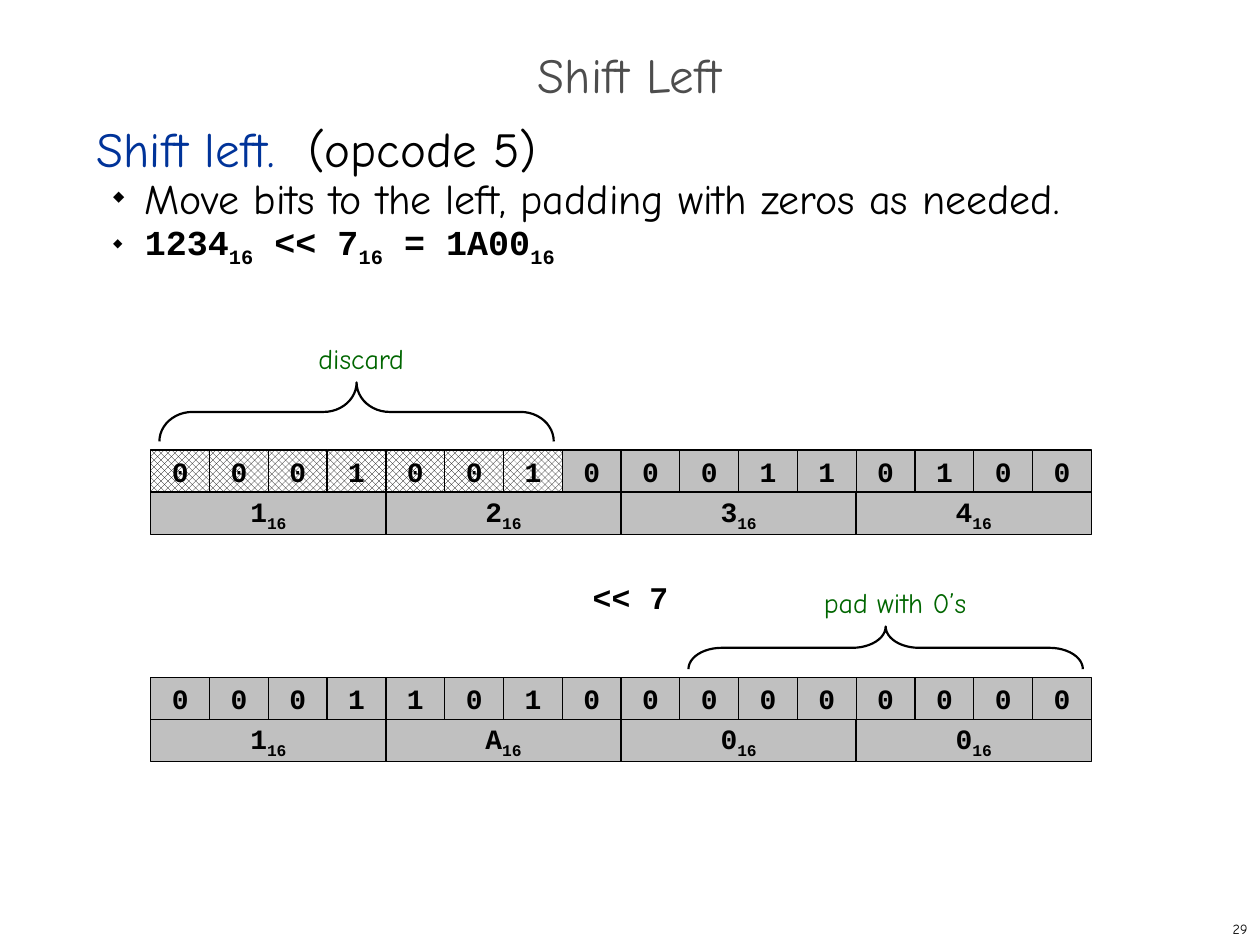
from dataclasses import dataclass

from lxml import etree
from pptx import Presentation
from pptx.dml.color import RGBColor
from pptx.enum.dml import MSO_PATTERN
from pptx.enum.shapes import MSO_SHAPE
from pptx.enum.text import MSO_ANCHOR, PP_ALIGN
from pptx.oxml.ns import qn
from pptx.util import Cm, Pt

LEFT, CENTER, RIGHT = PP_ALIGN.LEFT, PP_ALIGN.CENTER, PP_ALIGN.RIGHT
TOP, MIDDLE = MSO_ANCHOR.TOP, MSO_ANCHOR.MIDDLE
RECTANGLE, LEFT_BRACE = MSO_SHAPE.RECTANGLE, MSO_SHAPE.LEFT_BRACE
LATTICE = MSO_PATTERN.OUTLINED_DIAMOND

BLACK = RGBColor(0x00, 0x00, 0x00)
HATCH = RGBColor(0x01, 0x00, 0x00)
WHITE = RGBColor(0xFF, 0xFF, 0xFF)
SILVER = RGBColor(0xC0, 0xC0, 0xC0)
GRAY = RGBColor(0x4D, 0x4D, 0x4D)
BLUE = RGBColor(0x00, 0x33, 0x99)
GREEN = RGBColor(0x00, 0x66, 0x00)

PROSE, CODE = "Comic Neue", "Courier New"

WORD_LEFT = 3.04
HEX_WIDTH = 4.74
BIT_WIDTH = HEX_WIDTH / 4
ROW_HEIGHT = 0.85
SHIFT = 7
BRACE_SPAN = 7.95
BRACE_GAP = 0.17


@dataclass(frozen=True)
class Run:
    text: str
    color: RGBColor = BLACK
    subscript: bool = False


BASE_16 = Run("16", subscript=True)


@dataclass(frozen=True)
class Word:
    top: float
    bits: str
    digits: str
    discarded: int


@dataclass(frozen=True)
class Brace:
    word: Word
    first_bit: int
    depth: float
    curl: float


@dataclass(frozen=True)
class Label:
    text: str
    left: float
    top: float
    width: float
    height: float
    size: float
    color: RGBColor = BLACK
    font: str = PROSE
    bold: bool = False
    align: PP_ALIGN = LEFT
    anchor: MSO_ANCHOR = MIDDLE
    wrap: bool = True


SOURCE_WORD = Word(9.07, "0001001000110100", "1234", discarded=SHIFT)
SHIFTED_WORD = Word(13.66, "0001101000000000", "1A00", discarded=0)

BRACES = [
    Brace(SOURCE_WORD, 0, 1.19, 0.56),
    Brace(SHIFTED_WORD, 16 - SHIFT, 0.86, 0.78),
]

LABELS = [
    Label("29", 20.12, 18.41, 5.28, 0.64, 8, align=RIGHT, wrap=False),
    Label("Shift Left", 0, 0.85, 25.4, 1.27, 28, GRAY, align=CENTER),
    Label("<< 7", 10.34, 11.61, 4.74, 0.85, 18, font=CODE, bold=True,
          align=CENTER, wrap=False),
    Label("discard", 6.17, 6.76, 3.56, 0.94, 16, GREEN, anchor=TOP),
    Label("pad with 0’s", 16.36, 11.68, 4.32, 0.94, 16, GREEN, anchor=TOP),
]


def add_bullet(paragraph) -> None:
    properties = paragraph._p.get_or_add_pPr()
    properties.set("marL", str(Cm(0.97)))
    properties.set("indent", str(Cm(-0.64)))
    color = etree.SubElement(properties, qn("a:buClr"))
    etree.SubElement(color, qn("a:srgbClr"), val=str(BLACK))
    etree.SubElement(properties, qn("a:buSzPct"), val="35000")
    etree.SubElement(properties, qn("a:buChar"), char="◆")


def write(frame, *runs: Run, size: float, font: str = PROSE, bold: bool = False,
          align: PP_ALIGN = LEFT, spacing=None, bullet: bool = False) -> None:
    paragraph = frame.add_paragraph() if frame.text else frame.paragraphs[0]
    paragraph.alignment = align
    if spacing is not None:
        paragraph.line_spacing = spacing
    if bullet:
        paragraph.level = 1
        add_bullet(paragraph)
    for part in runs:
        run = paragraph.add_run()
        run.text = part.text
        run.font.size = Pt(size)
        run.font.name = font
        run.font.bold = bold
        run.font.color.rgb = part.color
        if part.subscript:
            run._r.get_or_add_rPr().set("baseline", "-25000")


def add_frame(slide, left: float, top: float, width: float, height: float,
              anchor: MSO_ANCHOR, wrap: bool):
    box = slide.shapes.add_textbox(Cm(left), Cm(top), Cm(width), Cm(height))
    box.text_frame.vertical_anchor = anchor
    box.text_frame.word_wrap = wrap
    return box.text_frame


def draw_label(slide, label: Label) -> None:
    frame = add_frame(slide, label.left, label.top, label.width, label.height,
                      label.anchor, label.wrap)
    write(frame, Run(label.text, label.color), size=label.size,
          font=label.font, bold=label.bold, align=label.align)


def draw_cell(slide, left: float, top: float, width: float, *runs: Run,
              hatched: bool = False) -> None:
    cell = slide.shapes.add_shape(RECTANGLE, Cm(left), Cm(top), Cm(width), Cm(ROW_HEIGHT))
    cell.shadow.inherit = False
    if hatched:
        cell.fill.patterned()
        cell.fill.pattern = LATTICE
        cell.fill.fore_color.rgb = HATCH
        cell.fill.back_color.rgb = WHITE
    else:
        cell.fill.solid()
        cell.fill.fore_color.rgb = SILVER
    cell.line.color.rgb = BLACK
    cell.line.width = Pt(0.75)
    cell.text_frame.vertical_anchor = MIDDLE
    cell.text_frame.word_wrap = False
    write(cell.text_frame, *runs, size=16, font=CODE, bold=True, align=CENTER)


def draw_word(slide, word: Word) -> None:
    for index, bit in enumerate(word.bits):
        draw_cell(slide, WORD_LEFT + index * BIT_WIDTH, word.top, BIT_WIDTH,
                  Run(bit), hatched=index < word.discarded)
    for index, digit in enumerate(word.digits):
        draw_cell(slide, WORD_LEFT + index * HEX_WIDTH, word.top + ROW_HEIGHT,
                  HEX_WIDTH, Run(digit), BASE_16)


def draw_brace(slide, brace: Brace) -> None:
    center_x = WORD_LEFT + (brace.first_bit + SHIFT / 2) * BIT_WIDTH
    center_y = brace.word.top - BRACE_GAP - brace.depth / 2
    outline = slide.shapes.add_shape(
        LEFT_BRACE, Cm(center_x - brace.depth / 2), Cm(center_y - BRACE_SPAN / 2),
        Cm(brace.depth), Cm(BRACE_SPAN))
    outline.rotation = 90
    outline.adjustments[0] = brace.curl
    outline.shadow.inherit = False
    outline.fill.background()
    outline.line.color.rgb = BLACK
    outline.line.width = Pt(1.25)


def draw_explanation(slide) -> None:
    frame = add_frame(slide, 1.7, 2.54, 23.88, 9.09, TOP, True)
    write(frame, Run("Shift left.  ", BLUE), Run("(opcode 5)"), size=28, spacing=Pt(26))
    write(frame, Run("Move bits to the left, padding with zeros as needed."),
          size=24, spacing=Pt(26), bullet=True)
    write(frame, Run("1234"), BASE_16, Run(" << 7"), BASE_16, Run(" = 1A00"), BASE_16,
          size=20, font=CODE, bold=True, spacing=Pt(26), bullet=True)


def main() -> None:
    deck = Presentation()
    deck.slide_width, deck.slide_height = Cm(25.4), Cm(19.05)
    slide = deck.slides.add_slide(deck.slide_layouts[6])
    draw_explanation(slide)
    for word in (SOURCE_WORD, SHIFTED_WORD):
        draw_word(slide, word)
    for brace in BRACES:
        draw_brace(slide, brace)
    for label in LABELS:
        draw_label(slide, label)
    deck.save("out.pptx")


if __name__ == "__main__":
    main()
